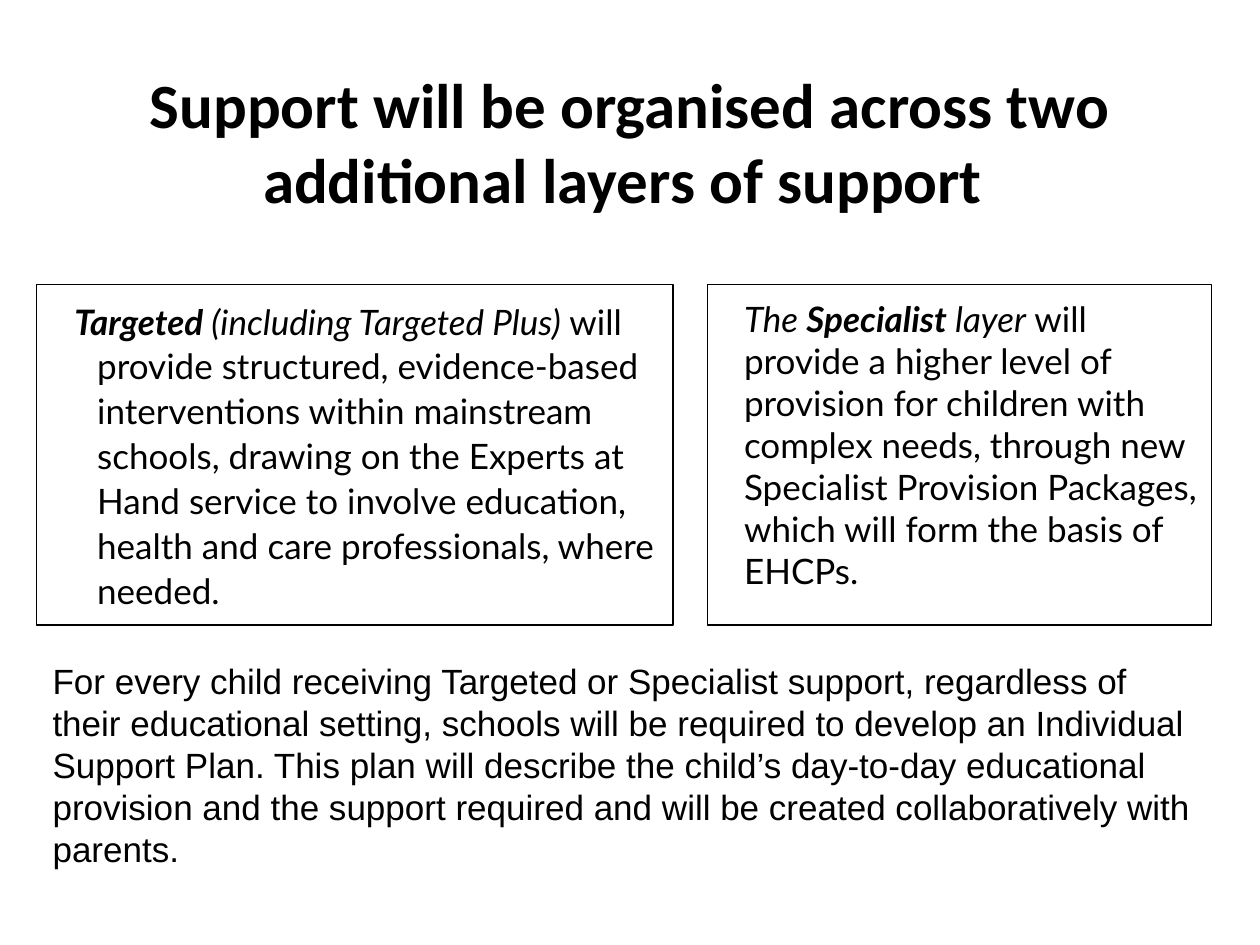
from lxml.etree import SubElement
from pptx import Presentation
from pptx.dml.color import RGBColor
from pptx.enum.shapes import MSO_SHAPE as Shape
from pptx.enum.text import MSO_ANCHOR as Anchor, MSO_AUTO_SIZE as AutoSize, PP_ALIGN as Align
from pptx.oxml.ns import qn
from pptx.util import Cm, Pt

BLACK = RGBColor(0x00, 0x00, 0x00)

# Content: each run is (text, bold, italic)
TITLE = [("Support will be organised across two additional layers of support ", True, False)]
TARGETED = [
    ("Targeted", True, True),
    (" (including Targeted Plus)", False, True),
    (" will provide structured, evidence-based interventions within mainstream schools, "
     "drawing on the Experts at Hand service to involve education, health and care "
     "professionals, where needed.", False, False),
]
SPECIALIST = [
    ("The ", False, True),
    ("Specialist", True, True),
    (" layer", False, True),
    (" will provide a higher level of provision for children with complex needs, through "
     "new Specialist Provision Packages, which will form the basis of EHCPs.", False, False),
]
PLAN = [
    ("For every child receiving Targeted or Specialist support, regardless of their "
     "educational setting, schools will be required to develop an Individual Support Plan. "
     "This plan will describe the child’s day-to-day educational provision and the support "
     "required and will be created collaboratively with parents.", False, False),
]

# Layer boxes: runs, left, width, left indent, first-line indent (cm), line spacing, space after
LAYERS = [
    (TARGETED, 0.74, 12.83, 0.97, -0.46, 1.07, 8),
    (SPECIALIST, 14.27, 10.16, 0.48, 0, 1.0, 0),
]
LAYER_TOP, LAYER_HEIGHT = 5.74, 6.86
INSET = 0.25


def fill_text(shape, runs, font, size, inset_y=INSET, anchor=Anchor.TOP):
    frame = shape.text_frame
    frame.word_wrap = True
    frame.vertical_anchor = anchor
    frame.margin_left = frame.margin_right = Cm(INSET)
    frame.margin_top = frame.margin_bottom = Cm(inset_y)
    paragraph = frame.paragraphs[0]
    paragraph.alignment = Align.LEFT
    for text, bold, italic in runs:
        run = paragraph.add_run()
        run.text = text
        run.font.name, run.font.size = font, Pt(size)
        run.font.bold, run.font.italic = bold, italic
        run.font.color.rgb = BLACK
    return paragraph


prs = Presentation()
prs.slide_width, prs.slide_height = Cm(25.4), Cm(19.05)
slide = prs.slides.add_slide(prs.slide_layouts[6])

# Title, ending in a line break of its own size
title = slide.shapes.add_textbox(Cm(0), Cm(2.01), Cm(25.4), Cm(3.18))
heading = fill_text(title, TITLE, "Calibri", 36, anchor=Anchor.MIDDLE)
heading.alignment = Align.CENTER
heading.add_line_break()
for parent, tag in ((heading._p[-1], "a:rPr"), (heading._p, "a:endParaRPr")):
    props = SubElement(parent, qn(tag), sz="3600", b="1")
    SubElement(props, qn("a:latin"), typeface="Calibri")

# Two layers of support
for runs, left, width, indent, first_line, spacing, after in LAYERS:
    layer = slide.shapes.add_shape(
        Shape.RECTANGLE, Cm(left), Cm(LAYER_TOP), Cm(width), Cm(LAYER_HEIGHT))
    layer.shadow.inherit = False
    layer.fill.background()
    layer.line.color.rgb = BLACK
    layer.line.width = Pt(0.75)
    paragraph = fill_text(layer, runs, "Lato", 20)
    paragraph.line_spacing = spacing
    paragraph.space_after = Pt(after)
    props = paragraph._p.get_or_add_pPr()
    props.set("marL", str(Cm(indent)))
    props.set("indent", str(Cm(first_line)))

# Individual Support Plan
plan = slide.shapes.add_textbox(Cm(0.81), Cm(13.16), Cm(23.62), Cm(5.13))
fill_text(plan, PLAN, "Arial", 20, inset_y=0.13)
plan.text_frame.auto_size = AutoSize.SHAPE_TO_FIT_TEXT

prs.save("out.pptx")
